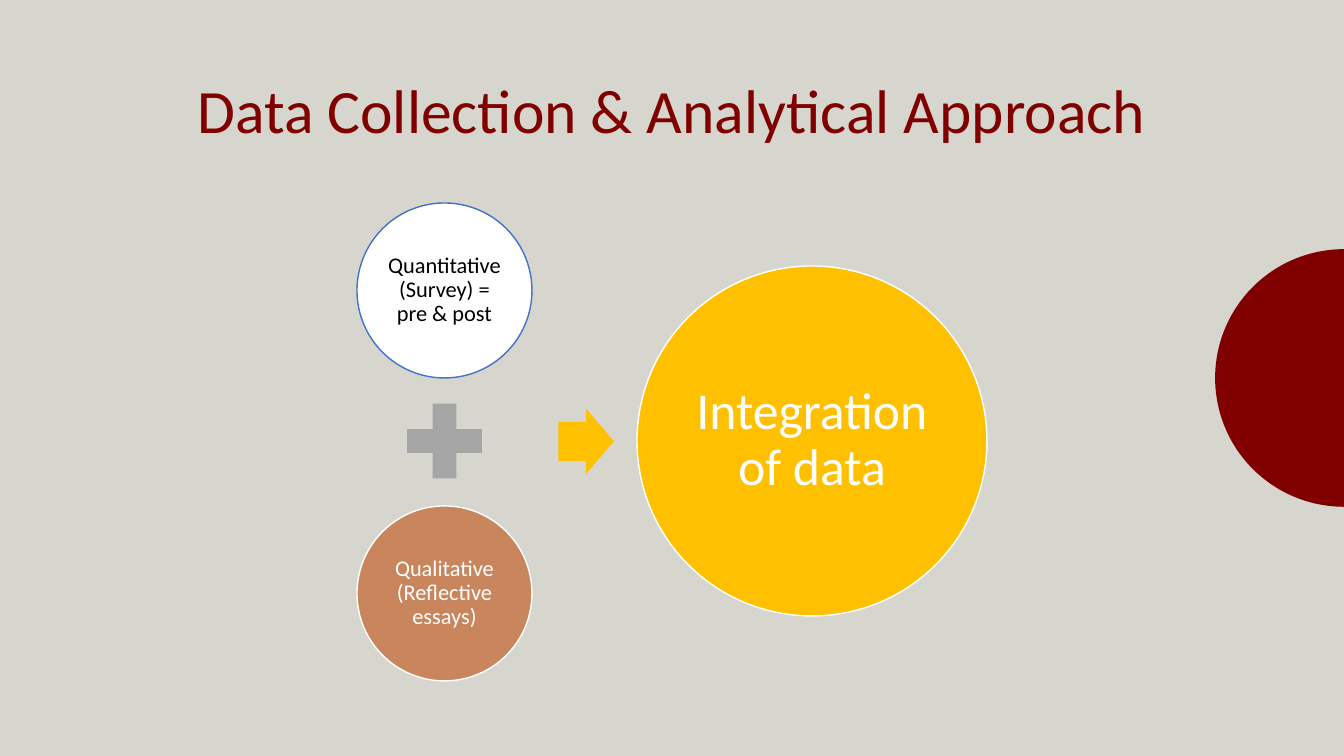
import math
import pptx
import pptx.util
import pptx.dml.color
import pptx.enum.shapes
import pptx.enum.text

Pt = pptx.util.Pt
RGBColor = pptx.dml.color.RGBColor
MSO_SHAPE = pptx.enum.shapes.MSO_SHAPE

BACKGROUND = RGBColor(0xD6, 0xD6, 0xCE)
MAROON = RGBColor(0x80, 0x00, 0x00)
WHITE = RGBColor(0xFF, 0xFF, 0xFF)
BLACK = RGBColor(0x00, 0x00, 0x00)
BLUE = RGBColor(0x44, 0x72, 0xC4)
GRAY = RGBColor(0xA5, 0xA5, 0xA5)
COPPER = RGBColor(0xC9, 0x85, 0x5C)
GOLD = RGBColor(0xFF, 0xC0, 0x00)


def style(sp, fill, line=None):
    sp.shadow.inherit = False
    sp.fill.solid()
    sp.fill.fore_color.rgb = fill
    if line is None:
        sp.line.fill.background()
    else:
        sp.line.color.rgb = line
        sp.line.width = Pt(1)


def write(sp, text, size, color, inset):
    tf = sp.text_frame
    tf.word_wrap = True
    tf.vertical_anchor = pptx.enum.text.MSO_ANCHOR.MIDDLE
    tf.margin_left = tf.margin_right = tf.margin_top = tf.margin_bottom = Pt(inset)
    p = tf.paragraphs[0]
    p.alignment = pptx.enum.text.PP_ALIGN.CENTER
    p.line_spacing = 0.9
    r = p.add_run()
    r.text = text
    r.font.name = "Calibri"
    r.font.size = Pt(size)
    r.font.color.rgb = color


prs = pptx.Presentation()
prs.slide_width = Pt(960)
prs.slide_height = Pt(540)
s = prs.slides.add_slide(prs.slide_layouts[6])
s.background.fill.solid()
s.background.fill.fore_color.rgb = BACKGROUND

radius = 92
arc = [
    (Pt(960 - radius * math.sin(math.radians(a))),
     Pt(270 - radius * math.cos(math.radians(a))))
    for a in range(0, 181, 2)
]
builder = s.shapes.build_freeform(*arc[0], scale=1.0)
builder.add_line_segments(arc[1:], close=True)
style(builder.convert_to_shape(), MAROON)

title = s.shapes.add_textbox(Pt(66), Pt(28.75), Pt(828), Pt(104.4))
write(title, "Data Collection & Analytical Approach", 44, MAROON, 5)

circles = [
    (255, 145, 125, WHITE, BLUE, "Quantitative (Survey) = pre & post", 16, BLACK, 1.6),
    (255, 361.4, 125, COPPER, WHITE, "Qualitative (Reflective essays)", 16, WHITE, 1.6),
    (455, 190, 250, GOLD, WHITE, "Integration of data", 37, WHITE, 3.7),
]
for left, top, size, fill, line, text, font_size, color, inset in circles:
    sp = s.shapes.add_shape(MSO_SHAPE.OVAL, Pt(left), Pt(top), Pt(size), Pt(size))
    style(sp, fill, line)
    write(sp, text, font_size, color, inset)

plus = s.shapes.add_shape(MSO_SHAPE.MATH_PLUS, Pt(281.3), Pt(278.8), Pt(72.5), Pt(72.5))
style(plus, GRAY)

arrow = s.shapes.add_shape(MSO_SHAPE.RIGHT_ARROW, Pt(398.8), Pt(292), Pt(39.75), Pt(46.5))
arrow.adjustments[0] = 0.6
arrow.adjustments[1] = 0.5
style(arrow, GOLD)

prs.save("out.pptx")
